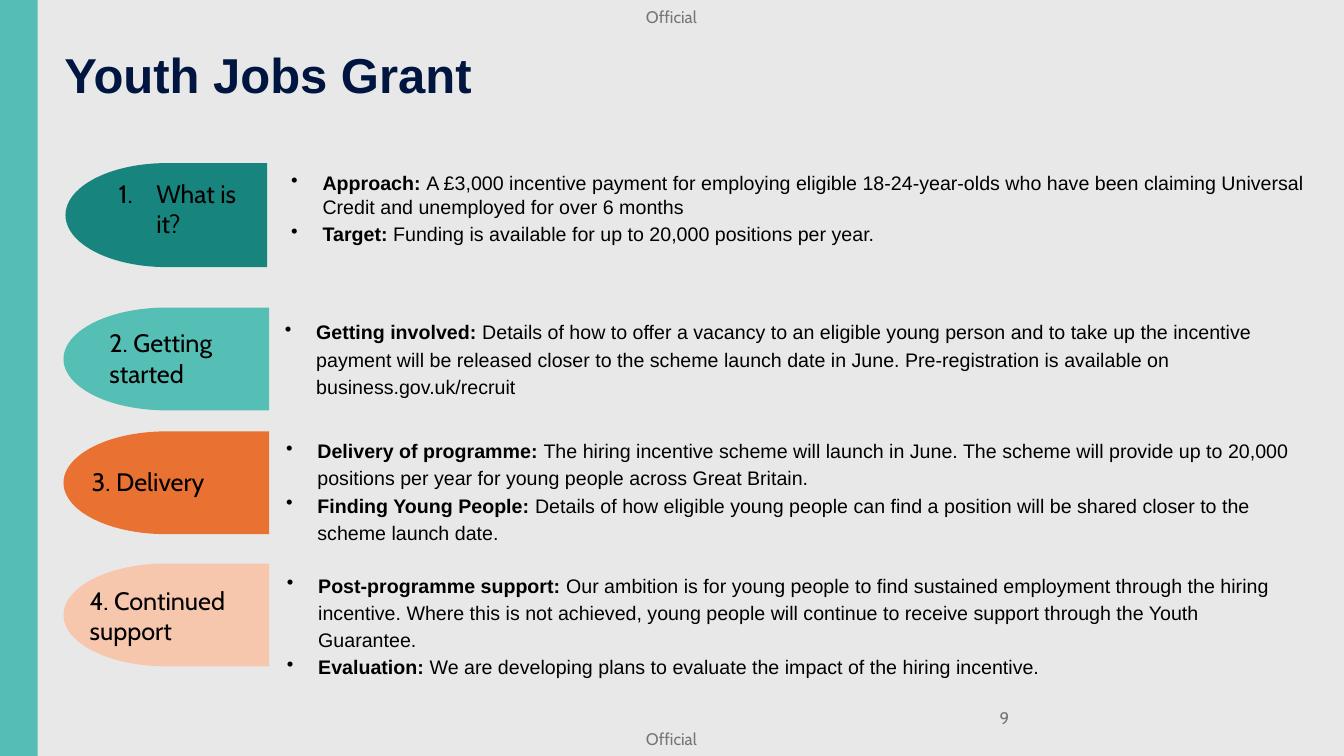
"""Build the Youth Jobs Grant slide."""
import pptx
import pptx.util
import pptx.dml.color
import pptx.enum.shapes
import pptx.enum.text
import pptx.oxml.ns
from lxml import etree

Cm = pptx.util.Cm
Pt = pptx.util.Pt
RGBColor = pptx.dml.color.RGBColor
MSO_SHAPE = pptx.enum.shapes.MSO_SHAPE
MSO_ANCHOR = pptx.enum.text.MSO_ANCHOR
PP_ALIGN = pptx.enum.text.PP_ALIGN

BACKGROUND = RGBColor(0xE8, 0xE8, 0xE8)
NAVY = RGBColor(0x00, 0x15, 0x40)
BLACK = RGBColor(0x00, 0x00, 0x00)
GREY = RGBColor(0x75, 0x75, 0x75)
BAND_TEAL = RGBColor(0x56, 0xBD, 0xB4)
DARK_TEAL = RGBColor(0x18, 0x84, 0x7E)
TEAL = RGBColor(0x55, 0xBE, 0xB5)
ORANGE = RGBColor(0xE9, 0x71, 0x32)
PEACH = RGBColor(0xF6, 0xC6, 0xAD)

SLIDE_WIDTH, SLIDE_HEIGHT = 33.87, 19.05
TITLE_FORMAT = {"name": "Arial", "size": Pt(35), "bold": True}
LABEL_FORMAT = {"name": "Cabin", "size": Pt(18)}
BODY_FORMAT = {"name": "Arial", "size": Pt(14)}
MARKING_FORMAT = {"name": "Cabin", "size": Pt(12)}
NO_MARGINS = {"margin_left": 0, "margin_top": 0, "margin_right": 0, "margin_bottom": 0}

SECTIONS = [
    {
        "label": "What is it?", "numbered": True, "fill": DARK_TEAL,
        "pill": (1.65, 4.11, 5.08, 2.62), "label_box": (1.09, 0.25, 4.09, 1.8),
        "detail_box": (5.44, 0.08, 26.19, 4.65),
        "spacing": {"space_before": Pt(2.8)},
        "details": [
            ("Approach: ", "A £3,000 incentive payment for employing eligible 18-24-year-olds who have "
             "been claiming Universal Credit and unemployed for over 6 months"),
            ("Target: ", "Funding is available for up to 20,000 positions per year."),
        ],
    },
    {
        "label": "2. Getting started", "numbered": False, "fill": TEAL,
        "pill": (1.6, 7.75, 5.18, 2.59), "label_box": (0.91, 0.38, 4.09, 1.8),
        "detail_box": (5.33, 0.1, 26.31, 2.34),
        "spacing": {"line_spacing": Pt(19.5)},
        "details": [
            ("Getting involved: ", "Details of how to offer a vacancy to an eligible young person and to "
             "take up the incentive payment will be released closer to the scheme launch date in June. "
             "Pre-registration is available on business.gov.uk/recruit"),
        ],
    },
    {
        "label": "3. Delivery", "numbered": False, "fill": ORANGE,
        "pill": (1.6, 10.87, 5.18, 2.59), "label_box": (0.46, 0.76, 5.08, 1.02),
        "detail_box": (5.36, -0.03, 26.31, 3.71),
        "spacing": {"line_spacing": Pt(19.5)},
        "details": [
            ("Delivery of programme: ", "The hiring incentive scheme will launch in June. The scheme will "
             "provide up to 20,000 positions per year for young people across Great Britain."),
            ("Finding Young People: ", "Details of how eligible young people can find a position will be "
             "shared closer to the scheme launch date."),
        ],
    },
    {
        "label": "4. Continued support", "numbered": False, "fill": PEACH,
        "pill": (1.6, 14.2, 5.18, 2.59), "label_box": (0.41, 0.43, 5.08, 1.8),
        "detail_box": (5.38, 0.03, 25.81, 3.05),
        "spacing": {"line_spacing": Pt(19.5)},
        "details": [
            ("Post-programme support: ", "Our ambition is for young people to find sustained employment "
             "through the hiring incentive. Where this is not achieved, young people will continue to "
             "receive support through the Youth Guarantee."),
            ("Evaluation: ", "We are developing plans to evaluate the impact of the hiring incentive."),
        ],
    },
]


def set_attributes(target, values):
    """Set every attribute in a dict of format values."""
    for name, value in values.items():
        setattr(target, name, value)


def set_font(font, values, color):
    """Apply font values and a solid colour."""
    set_attributes(font, values)
    font.color.rgb = color


def add_bullet(paragraph, indent, tag, **attributes):
    """Give a paragraph a hanging indent and a bullet element."""
    properties = paragraph._p.get_or_add_pPr()
    properties.set("marL", str(Cm(indent)))
    properties.set("indent", str(-Cm(indent)))
    bullet = etree.SubElement(properties, pptx.oxml.ns.qn(tag))
    for name, value in attributes.items():
        bullet.set(name, value)


def add_text_frame(slide, box):
    """Add a wrapping text box and return its text frame."""
    frame = slide.shapes.add_textbox(*map(Cm, box)).text_frame
    frame.word_wrap = True
    return frame


def add_plain_shape(slide, preset, box, fill):
    """Add a filled shape without outline or shadow."""
    shape = slide.shapes.add_shape(preset, *map(Cm, box))
    shape.shadow.inherit = False
    shape.fill.solid()
    shape.fill.fore_color.rgb = fill
    shape.line.fill.background()
    return shape


def add_marking(slide, box, text, alignment):
    """Add a small grey line of header or footer text."""
    frame = add_text_frame(slide, box)
    set_attributes(frame, NO_MARGINS)
    paragraph = frame.paragraphs[0]
    paragraph.text = text
    paragraph.alignment = alignment
    set_font(paragraph.font, MARKING_FORMAT, GREY)


def add_frame(slide):
    """Place the background, side band, markings and page number."""
    slide.background.fill.solid()
    slide.background.fill.fore_color.rgb = BACKGROUND
    add_plain_shape(slide, MSO_SHAPE.RECTANGLE, (0, 0, 0.95, SLIDE_HEIGHT), BAND_TEAL)
    for top in (0.18, 18.36):
        add_marking(slide, (16.28, top, 1.42, 0.51), "Official", PP_ALIGN.LEFT)
    add_marking(slide, (24.4, 17.83, 1.03, 0.51), "9", PP_ALIGN.RIGHT)


def add_title(slide, box, text):
    """Move and format the title placeholder."""
    title = slide.shapes.title
    set_attributes(title, dict(zip(("left", "top", "width", "height"), map(Cm, box))))
    frame = title.text_frame
    frame.text = text
    set_attributes(frame, {"word_wrap": True, "vertical_anchor": MSO_ANCHOR.MIDDLE,
                           "auto_size": pptx.enum.text.MSO_AUTO_SIZE.NONE})
    frame.paragraphs[0].alignment = PP_ALIGN.LEFT
    set_font(frame.paragraphs[0].font, TITLE_FORMAT, NAVY)


def add_section(slide, section):
    """Place a pill with its label and bulleted details beside it."""
    left, top = section["pill"][:2]
    pill = add_plain_shape(slide, MSO_SHAPE.FLOWCHART_DELAY, section["pill"], section["fill"])
    pill.rotation = 180

    def beside_pill(box):
        """Shift a box by the corner of the pill."""
        return (left + box[0], top + box[1], *box[2:])

    label = add_text_frame(slide, beside_pill(section["label_box"])).paragraphs[0]
    label.text = section["label"]
    if section["numbered"]:
        add_bullet(label, 0.95, "a:buAutoNum", type="arabicPeriod")
    set_font(label.font, LABEL_FORMAT, BLACK)

    frame = add_text_frame(slide, beside_pill(section["detail_box"]))
    for index, (heading, detail) in enumerate(section["details"]):
        paragraph = frame.add_paragraph() if index else frame.paragraphs[0]
        set_attributes(paragraph, section["spacing"])
        if index == 0:
            paragraph.space_before = Pt(0)
        add_bullet(paragraph, 0.79, "a:buChar", char="•")
        for text, bold in ((heading, True), (detail, False)):
            run = paragraph.add_run()
            run.text = text
            set_font(run.font, {**BODY_FORMAT, "bold": bold}, BLACK)


def main():
    """Build and save the presentation."""
    presentation = pptx.Presentation()
    presentation.slide_width = Cm(SLIDE_WIDTH)
    presentation.slide_height = Cm(SLIDE_HEIGHT)
    slide = presentation.slides.add_slide(presentation.slide_layouts[5])
    add_frame(slide)
    add_title(slide, (1.37, 0.97, 31.93, 1.8), "Youth Jobs Grant")
    for section in SECTIONS:
        add_section(slide, section)
    presentation.save("out.pptx")


if __name__ == "__main__":
    main()
